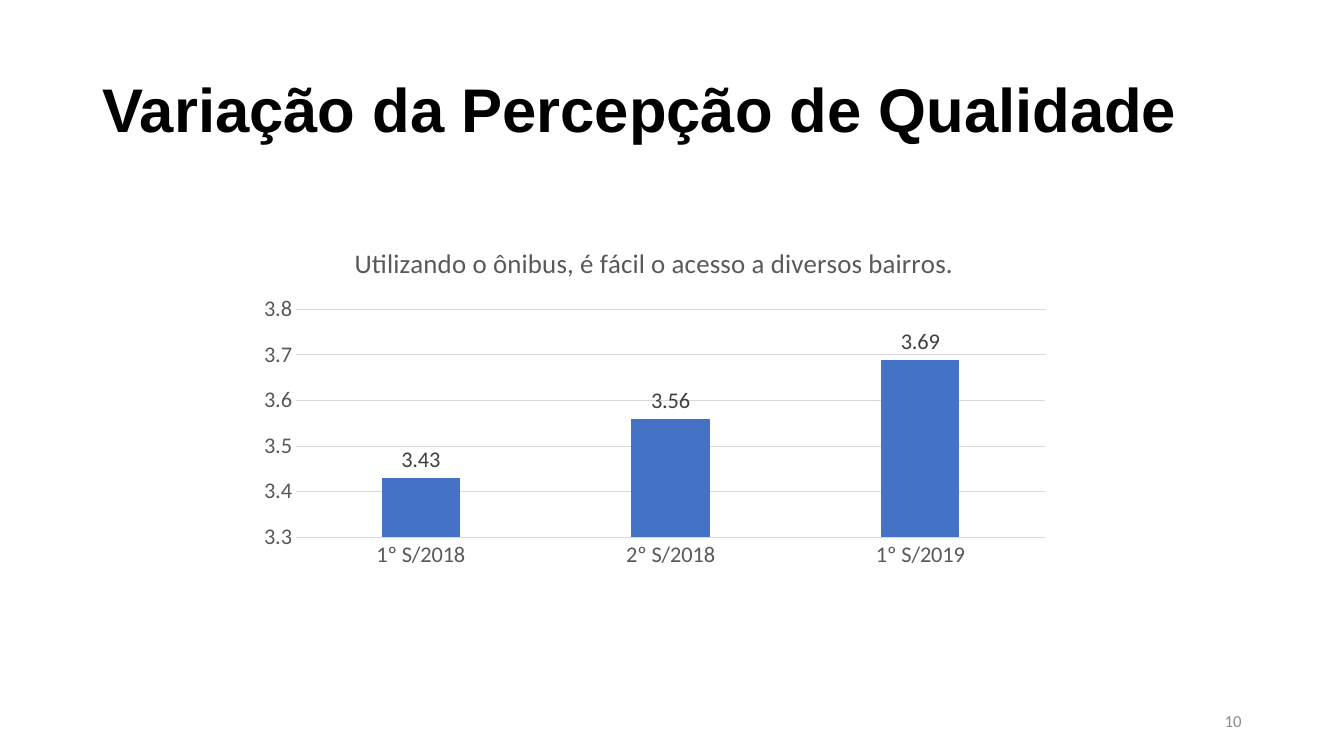
import pptx
import pptx.chart.data
import pptx.dml.color
import pptx.enum.chart
import pptx.enum.text
import pptx.util

PX = 9525  # EMU per px, 96 px to the inch
QUESTION = "Utilizando o ônibus, é fácil o acesso a diversos bairros."
SCORES = {"1º S/2018": 3.43, "2º S/2018": 3.56, "1º S/2019": 3.69}
GREY, RULE, BAR = "595959", "D9D9D9", "4472C4"


def px(*lengths):
    return [pptx.util.Emu(n * PX) for n in lengths]


def rgb(color):
    return pptx.dml.color.RGBColor.from_string(color)


def set_font(font, size, color, name="Calibri", bold=False):
    font.size = pptx.util.Pt(size)
    font.color.rgb = rgb(color)
    font.name = name
    font.bold = bold


def set_line(line, color):
    line.color.rgb = rgb(color)
    line.width = pptx.util.Pt(0.75)


def add_text(slide, box, text, align="LEFT", spacing=1.0, **font):
    tf = slide.shapes.add_textbox(*px(*box)).text_frame
    tf.word_wrap = True
    tf.vertical_anchor = pptx.enum.text.MSO_ANCHOR.MIDDLE
    p = tf.paragraphs[0]
    p.alignment = pptx.enum.text.PP_ALIGN[align]
    p.line_spacing = spacing
    r = p.add_run()
    r.text = text
    set_font(r.font, **font)


def add_score_chart(slide, box):
    data = pptx.chart.data.CategoryChartData()
    data.categories = list(SCORES)
    data.add_series(QUESTION, list(SCORES.values()))
    kind = pptx.enum.chart.XL_CHART_TYPE.COLUMN_CLUSTERED
    chart = slide.shapes.add_chart(kind, *px(*box), data).chart
    set_font(chart.font, 16, "000000")
    chart.has_legend = False

    # Chart title
    chart.has_title = True
    r = chart.chart_title.text_frame.paragraphs[0].add_run()
    r.text = QUESTION
    set_font(r.font, 19.2, GREY)
    chart.chart_title.include_in_layout = False

    # Axes
    for axis in (chart.category_axis, chart.value_axis):
        axis.major_tick_mark = pptx.enum.chart.XL_TICK_MARK.NONE
        axis.minor_tick_mark = pptx.enum.chart.XL_TICK_MARK.NONE
        set_font(axis.tick_labels.font, 16, GREY)
    set_line(chart.category_axis.format.line, RULE)
    values = chart.value_axis
    values.minimum_scale, values.maximum_scale, values.major_unit = 3.3, 3.8, 0.1
    values.format.line.fill.background()
    values.has_major_gridlines = True
    set_line(values.major_gridlines.format.line, RULE)

    # Columns and their labels
    plot = chart.plots[0]
    plot.gap_width, plot.overlap = 219, -27
    plot.vary_by_categories = False
    series = plot.series[0]
    series.format.fill.solid()
    series.format.fill.fore_color.rgb = rgb(BAR)
    labels = series.data_labels
    labels.show_value = True
    labels.position = pptx.enum.chart.XL_LABEL_POSITION.OUTSIDE_END
    set_font(labels.font, 16, "404040")


def build_slide(prs):
    slide = prs.slides.add_slide(prs.slide_layouts[6])
    add_text(slide, (88, 38, 1104, 139), "Variação da Percepção de Qualidade",
             spacing=0.9, size=44, color="000000", name="Arial", bold=True)
    add_score_chart(slide, (236, 216, 775, 332))
    add_text(slide, (904, 667, 288, 38), "10", align="RIGHT", size=12, color="8C8C8C")


def main():
    prs = pptx.Presentation()
    prs.slide_width, prs.slide_height = px(1280, 720)
    build_slide(prs)
    prs.save("out.pptx")


if __name__ == "__main__":
    main()
